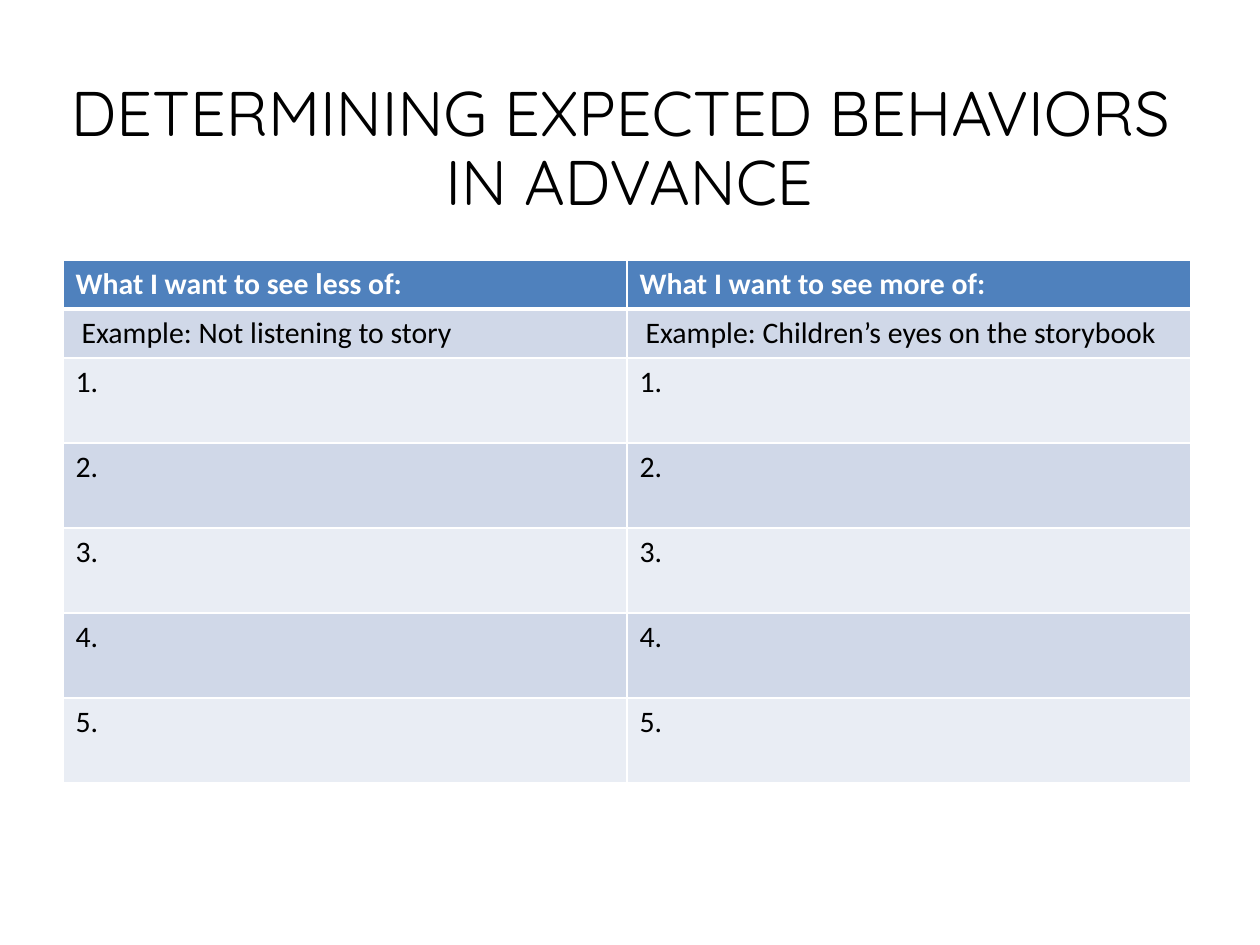
from dataclasses import dataclass

from lxml import etree
from pptx import Presentation
from pptx import util as u
from pptx.dml.color import RGBColor
from pptx.enum import text
from pptx.oxml import ns

EMU_PER_PX = 914400 / 126


def px(length):
    return u.Emu(round(length * EMU_PER_PX))


@dataclass(frozen=True)
class Theme:
    title_font: str = "Quicksand"
    body_font: str = "Calibri"
    title_size: float = 36
    title_scale: int = 90
    body_size: float = 17
    ink: str = "000000"
    paper: str = "FFFFFF"
    header: str = "4F81BD"
    bands: tuple = ("D0D8E8", "E9EDF4")
    thin: float = 1
    thick: float = 3


class SlideBuilder:
    def __init__(self, slide, theme):
        self.slide = slide
        self.theme = theme

    def style(self, para, color, **formats):
        for name, value in formats.items():
            setattr(para.font, name, value)
        para.font.color.rgb = RGBColor.from_string(color)

    def title(self, words, left, top, width, height):
        box = self.slide.shapes.add_textbox(*map(px, (left, top, width, height)))
        frame = box.text_frame
        frame.word_wrap = True
        frame.vertical_anchor = text.MSO_ANCHOR.MIDDLE
        frame.auto_size = text.MSO_AUTO_SIZE.TEXT_TO_FIT_SHAPE
        fit = box.element.find(".//" + ns.qn("a:normAutofit"))
        fit.set("fontScale", str(self.theme.title_scale * 1000))
        para = frame.paragraphs[0]
        para.text = words
        para.alignment = text.PP_ALIGN.CENTER
        self.style(para, self.theme.ink, name=self.theme.title_font,
                   size=u.Pt(self.theme.title_size))

    def borders(self, cell, top, bottom):
        """Draw all four cell edges; call before filling the cell."""
        properties = cell._tc.get_or_add_tcPr()
        thin = self.theme.thin
        for side, points in {"L": thin, "R": thin, "T": top, "B": bottom}.items():
            line = etree.SubElement(properties, ns.qn(f"a:ln{side}"), w=str(u.Pt(points)))
            fill = etree.SubElement(line, ns.qn("a:solidFill"))
            etree.SubElement(fill, ns.qn("a:srgbClr"), val=self.theme.paper)

    def cell(self, cell, words, row, indent):
        theme = self.theme
        is_header = row == 0
        self.borders(cell, theme.thick if row == 1 else theme.thin,
                     theme.thick if is_header else theme.thin)
        cell.fill.solid()
        fill = theme.header if is_header else theme.bands[(row - 1) % 2]
        cell.fill.fore_color.rgb = RGBColor.from_string(fill)
        cell.margin_left = u.Inches(0.1) + px(indent)
        para = cell.text_frame.paragraphs[0]
        para.text = words
        self.style(para, theme.paper if is_header else theme.ink, name=theme.body_font,
                   size=u.Pt(theme.body_size), bold=is_header)

    def table(self, rows, left, top, column_width, heights, indents):
        columns = len(rows[0])
        frame = self.slide.shapes.add_table(
            len(rows), columns, px(left), px(top),
            px(column_width * columns), px(sum(heights)))
        table = frame.table
        for column in table.columns:
            column.width = px(column_width)
        for index, (words, height) in enumerate(zip(rows, heights)):
            table.rows[index].height = px(height)
            for column, entry in enumerate(words):
                self.cell(table.cell(index, column), entry, index, indents.get(index, 0))


def main():
    deck = Presentation()
    deck.slide_width, deck.slide_height = px(1260), px(945)
    page = SlideBuilder(deck.slides.add_slide(deck.slide_layouts[6]), Theme())
    page.title("DETERMINING EXPECTED BEHAVIORS \vIN ADVANCE", 45, 63, 1168, 158)

    numbered = [(f"{number}.",) * 2 for number in range(1, 6)]
    rows = [
        ("What I want to see less of:", "What I want to see more of:"),
        ("Example: Not listening to story", "Example: Children’s eyes on the storybook"),
        *numbered,
    ]
    page.table(rows, left=63, top=260, column_width=564,
               heights=[49, 49] + [85] * len(numbered), indents={1: 6})
    deck.save("out.pptx")


if __name__ == "__main__":
    main()
